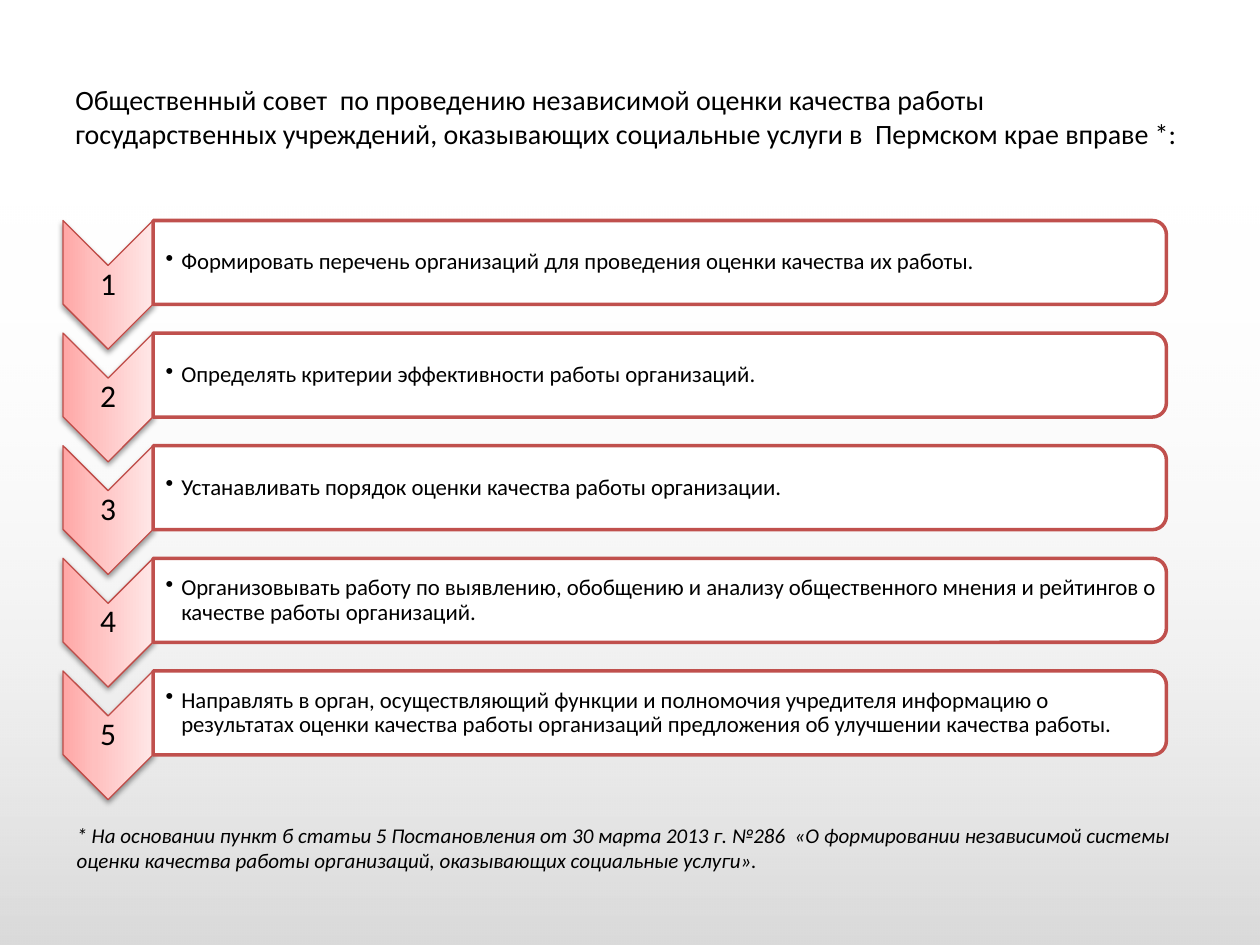
from pptx import Presentation
from pptx.dml.color import RGBColor
from pptx.enum.shapes import MSO_SHAPE
from pptx.enum.text import MSO_ANCHOR, PP_ALIGN
from pptx.oxml import parse_xml
from pptx.oxml.ns import nsdecls, qn
from pptx.util import Pt

RECT, CHEVRON = MSO_SHAPE.RECTANGLE, MSO_SHAPE.CHEVRON
BAR = MSO_SHAPE.ROUND_2_SAME_RECTANGLE
TOP, MIDDLE = MSO_ANCHOR.TOP, MSO_ANCHOR.MIDDLE
LEFT, CENTER = PP_ALIGN.LEFT, PP_ALIGN.CENTER

# Content
TITLE = ("Общественный совет  по проведению независимой оценки качества работы "
         "государственных учреждений, оказывающих социальные услуги в  "
         "Пермском крае вправе *:")
RIGHTS = [
    "Формировать перечень организаций для проведения оценки качества их работы.",
    "Определять критерии эффективности работы организаций.",
    "Устанавливать порядок оценки качества работы организации.",
    "Организовывать работу по выявлению, обобщению и анализу общественного "
    "мнения и рейтингов о качестве работы организаций.",
    "Направлять в орган, осуществляющий функции и полномочия учредителя "
    "информацию о результатах оценки качества работы организаций предложения "
    "об улучшении качества работы.",
]
NOTE = ("* На основании пункт б статьи 5 Постановления от 30 марта 2013 г. №286  "
        "«О формировании независимой системы оценки качества работы организаций, "
        "оказывающих социальные услуги».")

COLORS = {"text": "000000", "white": "FFFFFF", "bar": "C0504D", "edge": "BF4C48",
          "deep": "FFA6A5", "mid": "FFC0BF", "pale": "FFE7E7"}
FONT = "Calibri"

# Layout, in points
WIDE, HIGH = 720, 540
ROW_X, ROW_Y, STEP = 36, 126, 64.35
TIP_W, TIP_H = 51.5, 73.6
BAR_W, BAR_H = 579, 48

# Gradient stops: position, colour, opacity (percent)
HAZE = [(0, "text", 15), (100, "white", 0)]
BLUSH = [(0, "deep", 100), (35, "mid", 100), (100, "pale", 100)]


def color(key):
    return RGBColor.from_string(COLORS[key])


def add_shape(kind, x, y, w, h, fill="white", line=None, weight=1):
    shape = slide.shapes.add_shape(kind, Pt(x), Pt(y), Pt(w), Pt(h))
    shape.shadow.inherit = False
    shape.fill.solid()
    shape.fill.fore_color.rgb = color(fill)
    if line:
        shape.line.color.rgb = color(line)
        shape.line.width = Pt(weight)
    else:
        shape.line.fill.background()
    return shape


def add_turned(kind, x, y, w, h, **style):
    """Add a shape that fills the given box after a quarter turn."""
    shape = add_shape(kind, x + (w - h) / 2, y + (h - w) / 2, h, w, **style)
    shape.rotation = 90
    return shape


def set_fade(shape, stops):
    """Give the shape a gradient that runs from its bottom to its top."""
    marks = "".join(
        f'<a:gs pos="{pos * 1000}"><a:srgbClr val="{COLORS[key]}">'
        f'<a:alpha val="{alpha * 1000}"/></a:srgbClr></a:gs>'
        for pos, key, alpha in stops)
    fade = parse_xml(
        f'<a:gradFill {nsdecls("a")} rotWithShape="1"><a:gsLst>{marks}</a:gsLst>'
        '<a:lin ang="16200000" scaled="0"/></a:gradFill>')
    props = shape._element.spPr
    props.replace(props.find(qn("a:solidFill")), fade)


def set_shadow(shape):
    glow = parse_xml(
        f'<a:outerShdw {nsdecls("a")} blurRad="{Pt(3.1)}" dist="{Pt(1.6)}" '
        f'dir="5400000" rotWithShape="0"><a:srgbClr val="{COLORS["text"]}">'
        '<a:alpha val="38000"/></a:srgbClr></a:outerShdw>')
    shape._element.spPr.find(qn("a:effectLst")).append(glow)


def add_text(text, x, y, w, h, size, anchor=MIDDLE, align=LEFT,
             pads=(7.2, 3.6, 7.2, 3.6), space=1, italic=False):
    frame = slide.shapes.add_textbox(Pt(x), Pt(y), Pt(w), Pt(h)).text_frame
    frame.word_wrap = True
    frame.vertical_anchor = anchor
    (frame.margin_left, frame.margin_top,
     frame.margin_right, frame.margin_bottom) = map(Pt, pads)
    frame.text = text
    para = frame.paragraphs[0]
    para.alignment = align
    para.line_spacing = space
    font = para.runs[0].font
    font.name, font.size, font.italic = FONT, Pt(size), italic
    font.color.rgb = color("text")
    return para


def add_bullet(para, indent):
    props = para._p.get_or_add_pPr()
    props.set("marL", str(Pt(indent)))
    props.set("indent", str(Pt(-indent)))
    props.append(parse_xml(f'<a:buChar {nsdecls("a")} char="•"/>'))


deck = Presentation()
deck.slide_width, deck.slide_height = Pt(WIDE), Pt(HIGH)
slide = deck.slides.add_slide(deck.slide_layouts[6])

# Background haze and title
set_fade(add_shape(RECT, 0, 111.6, WIDE, HIGH - 111.6), HAZE)
add_text(TITLE, 36, 21.6, 648, 90, 16)

# Numbered rows
for i, right in enumerate(RIGHTS):
    y = ROW_Y + i * STEP
    bar_x = ROW_X + TIP_W
    tip = add_turned(CHEVRON, ROW_X, y, TIP_W, TIP_H, line="edge", weight=0.75)
    set_fade(tip, BLUSH)
    set_shadow(tip)
    add_text(str(i + 1), ROW_X, y + TIP_W / 2, TIP_W, TIP_H - TIP_W, 18,
             align=CENTER, pads=(0.9,) * 4, space=0.9)
    add_turned(BAR, bar_x, y, BAR_W, BAR_H, line="bar", weight=2)
    para = add_text(right, bar_x, y + 2.3, BAR_W - 2.3, BAR_H - 4.6, 13,
                    pads=(7.2, 0.9, 0.9, 0.9), space=0.9)
    add_bullet(para, 9)

# Footnote
add_text(NOTE, 36.7, 466.6, 652.3, 51, 12, anchor=TOP, italic=True)

deck.save("out.pptx")
